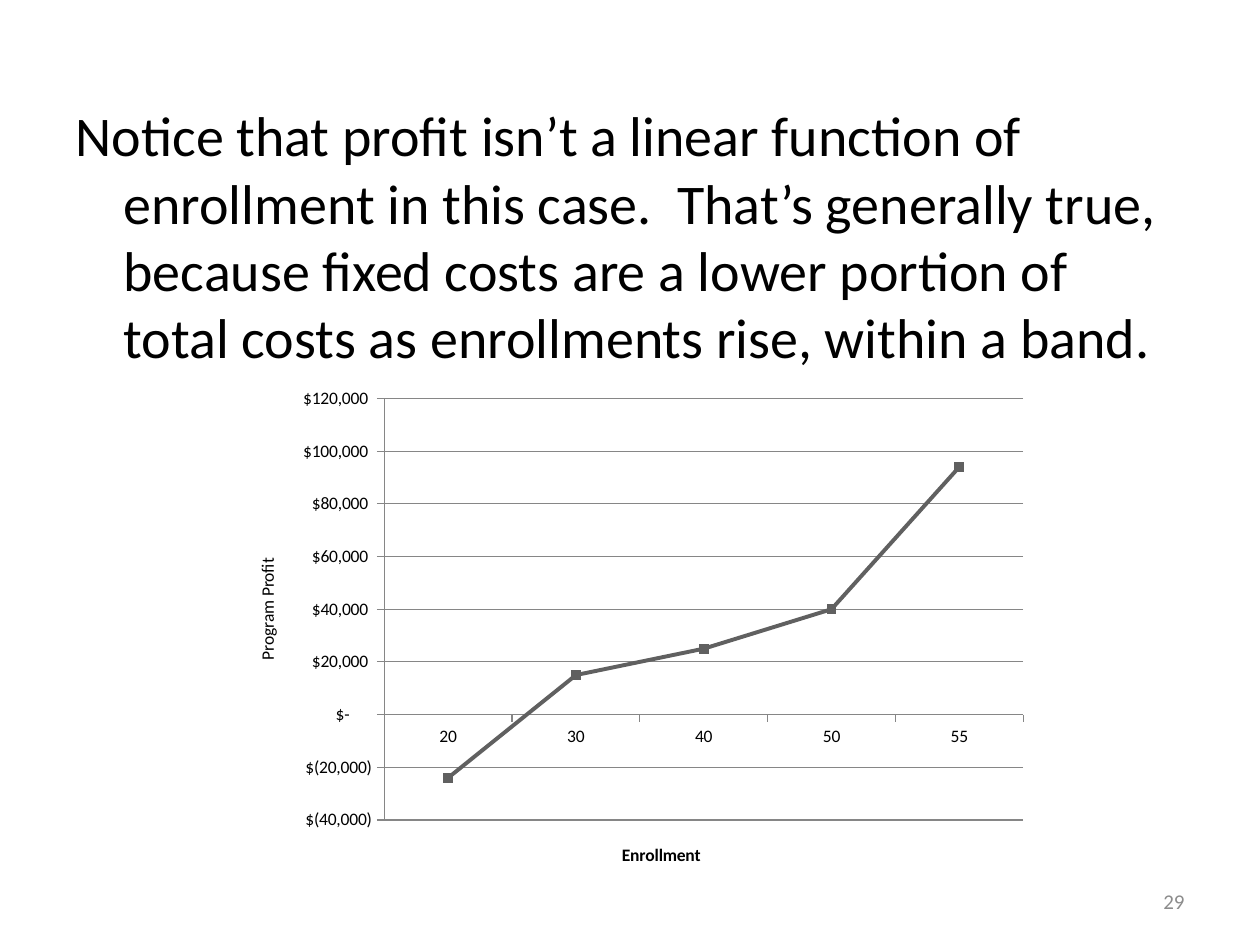
"""Build a slide on program profit against enrollment with a line chart."""
from lxml import etree
from pptx import Presentation
from pptx.chart.data import CategoryChartData
from pptx.dml.color import RGBColor
from pptx.enum.chart import XL_CHART_TYPE, XL_MARKER_STYLE, XL_TICK_MARK
from pptx.enum.text import MSO_ANCHOR, MSO_AUTO_SIZE, PP_ALIGN
from pptx.oxml import parse_xml
from pptx.oxml.ns import nsdecls, qn
from pptx.util import Inches, Pt

LINE_MARKERS = XL_CHART_TYPE.LINE_MARKERS
SQUARE = XL_MARKER_STYLE.SQUARE
CROSS = XL_TICK_MARK.CROSS
OUTSIDE = XL_TICK_MARK.OUTSIDE
NO_TICK = XL_TICK_MARK.NONE
MIDDLE = MSO_ANCHOR.MIDDLE
NO_AUTOFIT = MSO_AUTO_SIZE.NONE
RIGHT = PP_ALIGN.RIGHT

STATEMENT = (
    "Notice that profit isn’t a linear function of enrollment in this case.  "
    "That’s generally true, because fixed costs are a lower portion of total "
    "costs as enrollments rise, within a band."
)
PROFIT_BY_ENROLLMENT = {
    "20": -24000, "30": 15000, "40": 25000, "50": 40000, "55": 94000,
}
ACCOUNTING = '_("$"* #,##0_);_("$"* \\(#,##0\\);_("$"* "-"??_);_(@_)'


def color(value):
    return RGBColor.from_string(value)


class SlideBuilder:
    font_name = "Calibri"
    ink = "000000"
    muted = "8C8C8C"
    axis_ink = "868686"
    series_ink = "606060"

    def __init__(self, deck):
        self.page = deck.slides.add_slide(deck.slide_layouts[1])
        title = self.page.shapes.title
        title.element.getparent().remove(title.element)

    def style_font(self, font, size, ink, bold=False):
        font.name = self.font_name
        font.size = Pt(size)
        font.bold = bold
        font.color.rgb = color(ink)

    def place(self, shape, left, top, width, height):
        shape.left, shape.top = Inches(left), Inches(top)
        shape.width, shape.height = Inches(width), Inches(height)

    def body(self, text, *bounds):
        shape = self.page.placeholders[1]
        self.place(shape, *bounds)
        frame = shape.text_frame
        frame.text = text
        frame.auto_size = NO_AUTOFIT
        para = frame.paragraphs[0]
        properties = para._p.get_or_add_pPr()
        properties.set("marL", str(Inches(0.38)))
        properties.set("indent", str(Inches(-0.38)))
        etree.SubElement(properties, qn("a:buNone"))
        self.style_font(para.runs[0].font, 32, self.ink)

    def page_number(self, text, *bounds):
        box = self.page.shapes.add_textbox(*map(Inches, bounds))
        frame = box.text_frame
        frame.word_wrap = True
        frame.vertical_anchor = MIDDLE
        frame.text = text
        para = frame.paragraphs[0]
        para.alignment = RIGHT
        self.style_font(para.runs[0].font, 12, self.muted)

    def axis(self, axis, title, bold, minor_tick):
        axis.major_tick_mark = OUTSIDE if minor_tick is None else minor_tick
        axis.minor_tick_mark = NO_TICK
        axis.format.line.color.rgb = color(self.axis_ink)
        axis.format.line.width = Pt(0.75)
        frame = axis.axis_title.text_frame
        frame.text = title
        self.style_font(frame.paragraphs[0].runs[0].font, 10, self.ink, bold)

    def plot_area(self, chart, **fractions):
        area = chart._chartSpace.chart.plotArea
        for layout in area.findall(qn("c:layout")):
            area.remove(layout)
        sizes = "".join(f'<c:{key} val="{value}"/>' for key, value in fractions.items())
        area.insert(0, parse_xml(
            f'<c:layout {nsdecls("c")}><c:manualLayout><c:layoutTarget val="inner"/>'
            f'<c:xMode val="edge"/><c:yMode val="edge"/>{sizes}'
            "</c:manualLayout></c:layout>"
        ))

    def line_chart(self, values, category_title, value_title, *bounds):
        data = CategoryChartData()
        data.categories = list(values)
        data.add_series("Series 1", values.values())
        frame = self.page.shapes.add_chart(LINE_MARKERS, *map(Inches, bounds), data)
        chart = frame.chart
        chart.has_legend = False
        chart.has_title = False
        self.style_font(chart.font, 10, self.ink)
        self.plot_area(chart, x=0.19, y=0.04, w=0.79, h=0.82)

        self.axis(chart.category_axis, category_title, True, OUTSIDE)
        value_axis = chart.value_axis
        self.axis(value_axis, value_title, False, CROSS)
        value_axis.minimum_scale = -40000
        value_axis.maximum_scale = 120000
        value_axis.major_unit = 20000
        value_axis.tick_labels.number_format = ACCOUNTING
        value_axis.tick_labels.number_format_is_linked = False
        grid = value_axis.major_gridlines.format.line
        grid.color.rgb = color(self.axis_ink)
        grid.width = Pt(0.75)

        plot = chart.plots[0]
        plot.vary_by_categories = False
        series = plot.series[0]
        series.smooth = False
        series.format.line.color.rgb = color(self.series_ink)
        series.format.line.width = Pt(2.25)
        marker = series.marker
        marker.style = SQUARE
        marker.size = 5
        marker.format.fill.solid()
        marker.format.fill.fore_color.rgb = color(self.series_ink)
        marker.format.line.color.rgb = color(self.series_ink)


def main():
    deck = Presentation()
    deck.slide_width, deck.slide_height = Inches(10), Inches(7.5)
    builder = SlideBuilder(deck)
    builder.body(STATEMENT, 0.5, 0.75, 9, 2.33)
    builder.page_number("29", 7.17, 6.95, 2.33, 0.4)
    builder.line_chart(
        PROFIT_BY_ENROLLMENT, "Enrollment", "Program Profit", 1.83, 3, 6.42, 4.08
    )
    deck.save("out.pptx")


if __name__ == "__main__":
    main()
